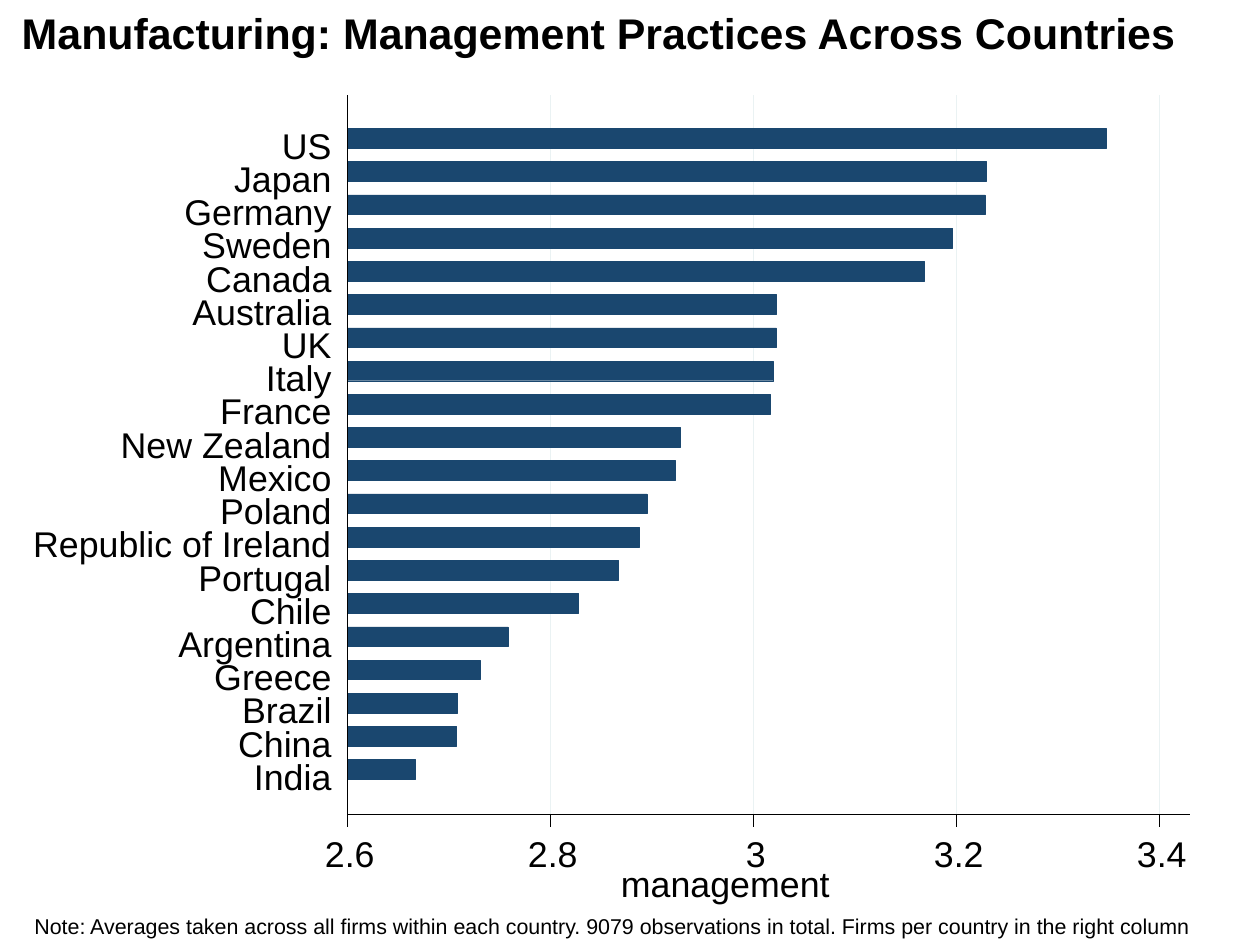
from lxml.etree import SubElement
from pptx import Presentation
from pptx.dml.color import RGBColor
from pptx.enum.shapes import MSO_CONNECTOR as Connector
from pptx.enum.shapes import MSO_SHAPE as Shape
from pptx.enum.text import PP_ALIGN as Align
from pptx.oxml.ns import qn
from pptx.util import Cm, Pt

BAR_LENGTHS = {
    "US": 14.99, "Japan": 12.62, "Germany": 12.6, "Sweden": 11.96,
    "Canada": 11.4, "Australia": 8.48, "UK": 8.48, "Italy": 8.41,
    "France": 8.36, "New Zealand": 6.58, "Mexico": 6.48, "Poland": 5.92,
    "Republic of Ireland": 5.77, "Portugal": 5.36, "Chile": 4.57,
    "Argentina": 3.18, "Greece": 2.62, "Brazil": 2.18, "China": 2.16,
    "India": 1.35,
}
TICKS = ["2.6", "2.8", "3", "3.2", "3.4"]
LEFT, RIGHT, TOP, BOTTOM = 6.86, 23.5, 1.88, 16.08
TICK_STEP, TICK_LENGTH = 4.01, 0.25
FIRST_BAR, BAR_HEIGHT = 2.54, 0.39
FIRST_LABEL, LABEL_HEIGHT = 2.44, 0.86
ROW_STEP = 12.47 / (len(BAR_LENGTHS) - 1)
NO_INSETS = (0, 0, 0, 0)


def color(value):
    return RGBColor.from_string(value)


def apply(target, settings):
    for name, value in settings.items():
        setattr(target, name, value)


class SlideBuilder:
    font = "Arial"
    ink = "000000"
    grid = "EAF2F3"
    navy = "1A476F"

    def __init__(self, page):
        self.page = page

    def text(self, words, left, top, width, height, size=20, bold=False,
             align=Align.LEFT, insets=NO_INSETS):
        box = self.page.shapes.add_textbox(Cm(left), Cm(top), Cm(width), Cm(height))
        frame = box.text_frame
        sides = ("margin_left", "margin_top", "margin_right", "margin_bottom")
        apply(frame, {side: Cm(inset) for side, inset in zip(sides, insets)})
        frame.word_wrap = True
        para = frame.paragraphs[0]
        para.alignment = align
        span = para.add_run()
        span.text = words
        apply(span.font, {"name": self.font, "size": Pt(size), "bold": bold})
        span.font.color.rgb = color(self.ink)

    def line(self, x1, y1, x2, y2, stroke):
        connector = self.page.shapes.add_connector(
            Connector.STRAIGHT, Cm(x1), Cm(y1), Cm(x2), Cm(y2))
        connector.line.color.rgb = color(stroke)
        connector.line.width = Pt(0.25)
        SubElement(connector._element.spPr, qn("a:effectLst"))

    def bar(self, left, top, width, height):
        box = self.page.shapes.add_shape(
            Shape.RECTANGLE, Cm(left), Cm(top), Cm(width), Cm(height))
        box.shadow.inherit = False
        box.fill.solid()
        box.fill.fore_color.rgb = color(self.navy)
        box.line.color.rgb = color(self.navy)
        box.line.width = Pt(0.25)


def main():
    deck = Presentation()
    apply(deck, {"slide_width": Cm(24.89), "slide_height": Cm(18.67)})
    slide = SlideBuilder(deck.slides.add_slide(deck.slide_layouts[6]))

    slide.text("Manufacturing: Management Practices Across Countries",
               0.43, 0, 23.5, 1.27, size=24, bold=True, insets=(0, 0.13, 0.25, 0.13))
    slide.text("Note: Averages taken across all firms within each country. "
               "9079 observations in total. Firms per country in the right column",
               0.43, 17.91, 23.52, 0.76, size=12, insets=(0.25, 0.13, 0.25, 0.13))

    tick_places = [(tick, LEFT + step * TICK_STEP) for step, tick in enumerate(TICKS)]
    for tick, x in tick_places:
        slide.line(x, BOTTOM, x, TOP, slide.grid)

    for row, length in enumerate(BAR_LENGTHS.values()):
        slide.bar(LEFT, FIRST_BAR + row * ROW_STEP, length, BAR_HEIGHT)

    slide.line(LEFT, BOTTOM, RIGHT, BOTTOM, slide.ink)
    for tick, x in tick_places:
        slide.line(x, BOTTOM, x, BOTTOM + TICK_LENGTH, slide.ink)
        slide.text(tick, x - 0.45, 16.44, 1, LABEL_HEIGHT, align=Align.CENTER)
    slide.text("management", 12.25, 17.03, 4.16, LABEL_HEIGHT, align=Align.CENTER)
    slide.line(LEFT, BOTTOM, LEFT, TOP, slide.ink)

    for row, country in enumerate(BAR_LENGTHS):
        slide.text(country, 0.55, FIRST_LABEL + row * ROW_STEP, 6, LABEL_HEIGHT,
                   align=Align.RIGHT)

    deck.save("out.pptx")


if __name__ == "__main__":
    main()
